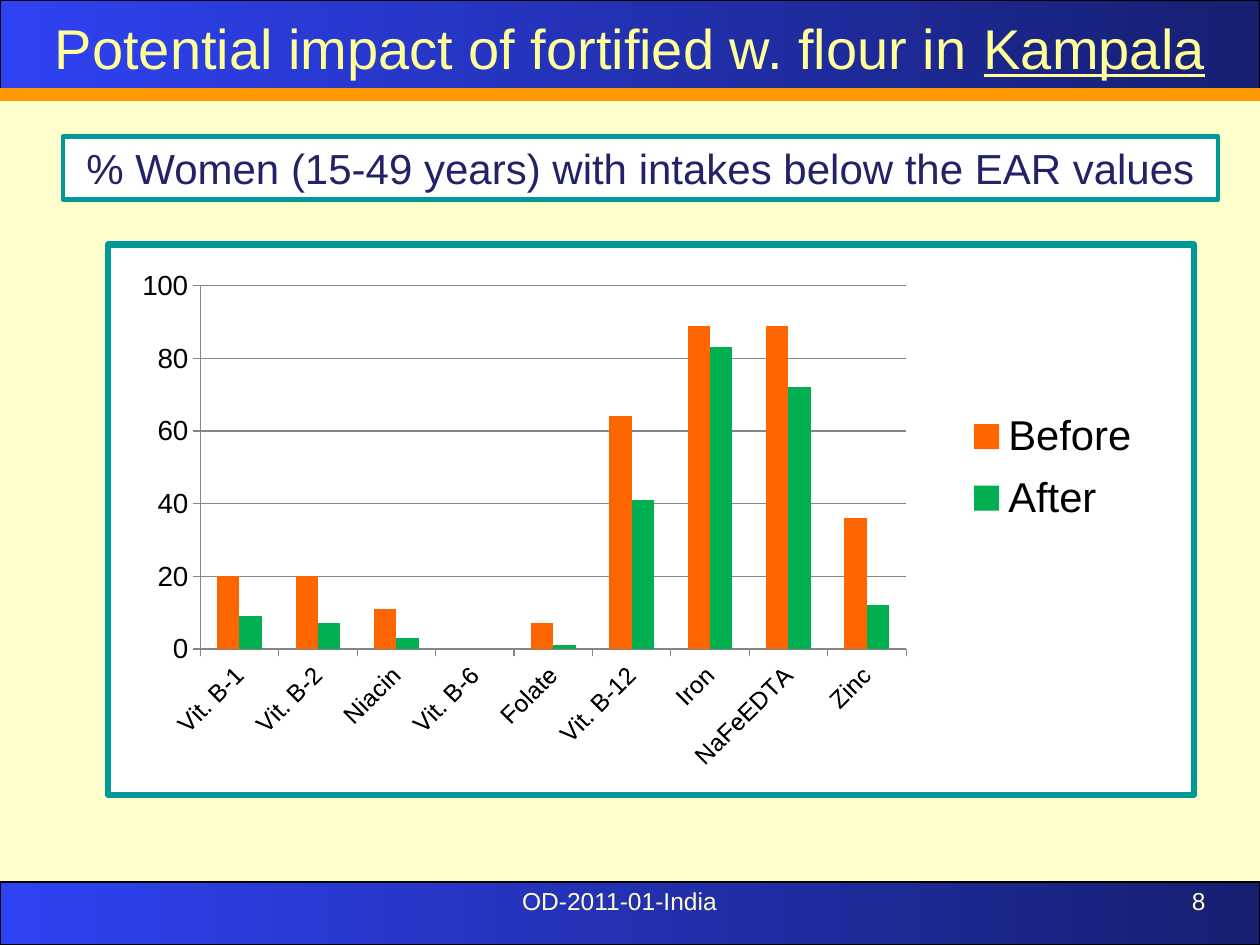
from dataclasses import dataclass

import pptx
import pptx.chart.data
import pptx.dml.color
import pptx.enum.chart
import pptx.enum.shapes
import pptx.enum.text
import pptx.oxml
import pptx.oxml.ns
import pptx.util

SLIDE_WIDTH, SLIDE_HEIGHT = 10, 7.5
COLUMNS, ROWS = 60, 90
ALIGN = pptx.enum.text.PP_ALIGN
ANCHOR = pptx.enum.text.MSO_ANCHOR


@dataclass(frozen=True)
class Theme:
    font: str = "Arial"
    background: str = "FFFFCC"
    band: tuple = ("2F42F3", "161F70")
    title: str = "FFFF99"
    rule: str = "FF9900"
    frame: str = "009999"
    panel: str = "FFFFFF"
    caption: str = "222267"
    ink: str = "000000"
    axis: str = "868686"
    before: str = "FF6600"
    after: str = "00B050"
    title_size: int = 32
    caption_size: int = 24
    value_size: int = 16
    small_size: int = 14


THEME = Theme()


def rgb(value):
    return pptx.dml.color.RGBColor.from_string(value)


def grid(column, row, columns, rows):
    """Turn grid cells into left, top, width and height."""
    x, y = SLIDE_WIDTH / COLUMNS, SLIDE_HEIGHT / ROWS
    return [pptx.util.Inches(n) for n in (column * x, row * y, columns * x, rows * y)]


def apply(target, formats):
    for name, value in formats.items():
        setattr(target, name, value)


def set_font(font, size, color):
    apply(font, {"name": THEME.font, "size": pptx.util.Pt(size)})
    font.color.rgb = rgb(color)


def set_line(line, color, width):
    line.color.rgb = rgb(color)
    line.width = pptx.util.Pt(width)


def set_fill(fill, color):
    fill.solid()
    fill.fore_color.rgb = rgb(color)


def write(shape, runs, size, color, alignment, anchor):
    """Write one paragraph from (text, underlined) pairs."""
    frame = shape.text_frame
    apply(frame, {"word_wrap": True, "vertical_anchor": anchor,
                  "auto_size": pptx.enum.text.MSO_AUTO_SIZE.NONE})
    paragraph = frame.paragraphs[0]
    paragraph.alignment = alignment
    for text, underlined in runs:
        run = paragraph.add_run()
        run.text = text
        set_font(run.font, size, color)
        if underlined:
            run.font.underline = True


def add_rectangle(slide, cells, line_color, line_width):
    shape = slide.shapes.add_shape(pptx.enum.shapes.MSO_SHAPE.RECTANGLE, *grid(*cells))
    shape.shadow.inherit = False
    set_line(shape.line, line_color, line_width)
    return shape


def add_band(slide, row, rows):
    fill = add_rectangle(slide, (0, row, COLUMNS, rows), THEME.ink, 0.75).fill
    fill.gradient()
    fill.gradient_angle = 0
    for stop, color in zip(fill.gradient_stops, THEME.band):
        stop.color.rgb = rgb(color)


def add_rule(slide, row):
    left, top, width, _ = grid(0, row, COLUMNS, 0)
    rule = slide.shapes.add_connector(
        pptx.enum.shapes.MSO_CONNECTOR.STRAIGHT, left, top, left + width, top)
    set_line(rule.line, THEME.rule, 8)
    rule.element.spPr.append(pptx.oxml.parse_xml(
        f"<a:effectLst {pptx.oxml.ns.nsdecls('a')}/>"))


def place_title(slide, runs):
    title = slide.shapes.title
    title.left, title.top, title.width, title.height = grid(0, 0, COLUMNS, 9)
    write(title, runs, THEME.title_size, THEME.title, ALIGN.CENTER, ANCHOR.MIDDLE)
    title.element.getparent().append(title.element)  # in front of its band


def add_footer_text(slide, text, column, columns, alignment):
    box = slide.shapes.add_textbox(*grid(column, 83.75, columns, 6.25))
    write(box, [(text, False)], THEME.small_size, THEME.background, alignment, ANCHOR.TOP)


def chart_layout(x, y, width, height, inner=False):
    """Manual layout, in shares of the chart's size."""
    target = '<c:layoutTarget val="inner"/>' if inner else ""
    sizes = "".join(f'<c:{tag} val="{value}"/>'
                    for tag, value in zip("xywh", (x, y, width, height)))
    return pptx.oxml.parse_xml(
        f"<c:layout {pptx.oxml.ns.nsdecls('c')}><c:manualLayout>{target}"
        f'<c:xMode val="edge"/><c:yMode val="edge"/>{sizes}</c:manualLayout></c:layout>')


def frame_chart(chart):
    """Fill and border of the chart area, and places of its parts."""
    qn, root = pptx.oxml.ns.qn, chart.element
    border = pptx.util.Pt(3.5)
    root.find(qn("c:chart")).addnext(pptx.oxml.parse_xml(
        f"<c:spPr {pptx.oxml.ns.nsdecls('c', 'a')}>"
        f'<a:solidFill><a:srgbClr val="{THEME.panel}"/></a:solidFill>'
        f'<a:ln w="{border}"><a:solidFill><a:srgbClr val="{THEME.frame}"/></a:solidFill>'
        "</a:ln></c:spPr>"))
    plot_area = root.find(".//" + qn("c:plotArea"))
    for layout in plot_area.findall(qn("c:layout")):
        plot_area.remove(layout)
    plot_area.insert(0, chart_layout(0.085, 0.075, 0.65, 0.66, inner=True))
    root.find(".//" + qn("c:legendPos")).addnext(chart_layout(0.78, 0.28, 0.18, 0.25))
    labels = root.find("/".join([".//" + qn("c:catAx"), qn("c:txPr"), qn("a:bodyPr")]))
    labels.set("rot", str(-45 * 60000))


def add_column_chart(slide, cells, categories, series):
    data = pptx.chart.data.CategoryChartData()
    data.categories = categories
    for name, values, _ in series:
        data.add_series(name, values)
    kinds = pptx.enum.chart
    chart = slide.shapes.add_chart(
        kinds.XL_CHART_TYPE.COLUMN_CLUSTERED, *grid(*cells), data).chart
    set_font(chart.font, THEME.small_size, THEME.ink)
    apply(chart, {"has_title": False, "has_legend": True})
    apply(chart.legend, {"position": kinds.XL_LEGEND_POSITION.RIGHT,
                         "include_in_layout": False})
    set_font(chart.legend.font, THEME.caption_size, THEME.ink)

    # Axes and grid lines
    for axis, size in ((chart.category_axis, THEME.small_size),
                       (chart.value_axis, THEME.value_size)):
        axis.major_tick_mark = kinds.XL_TICK_MARK.OUTSIDE
        set_line(axis.format.line, THEME.axis, 0.75)
        set_font(axis.tick_labels.font, size, THEME.ink)
    apply(chart.value_axis, {"minimum_scale": 0, "maximum_scale": 100,
                             "major_unit": 20, "has_major_gridlines": True})
    set_line(chart.value_axis.major_gridlines.format.line, THEME.axis, 0.75)

    # Columns
    plot = chart.plots[0]
    apply(plot, {"vary_by_categories": False, "gap_width": 150, "overlap": 0})
    for column, (_, _, color) in zip(plot.series, series):
        set_fill(column.format.fill, color)
    frame_chart(chart)


def add_caption(slide, text, cells):
    box = add_rectangle(slide, cells, THEME.frame, 2.5)
    set_fill(box.fill, THEME.panel)
    write(box, [(text, False)], THEME.caption_size, THEME.caption,
          ALIGN.CENTER, ANCHOR.MIDDLE)


def main():
    presentation = pptx.Presentation()
    presentation.slide_width = pptx.util.Inches(SLIDE_WIDTH)
    presentation.slide_height = pptx.util.Inches(SLIDE_HEIGHT)
    slide = presentation.slides.add_slide(
        presentation.slide_layouts.get_by_name("Title Only"))
    set_fill(slide.background.fill, THEME.background)

    # Header and footer
    add_band(slide, 0, 9)
    add_band(slide, 84, 6)
    place_title(slide, [("Potential impact of fortified w. flour in ", False),
                        ("Kampala", True)])
    add_rule(slide, 9)
    add_footer_text(slide, "OD-2011-01-India", 18.5, 22, ALIGN.CENTER)
    add_footer_text(slide, "8", 44, 14, ALIGN.RIGHT)

    # Chart with its caption
    add_column_chart(
        slide, (5, 23, 52, 53),
        ["Vit. B-1", "Vit. B-2", "Niacin", "Vit. B-6", "Folate", "Vit. B-12",
         "Iron", "NaFeEDTA", "Zinc"],
        [("Before", (20, 20, 11, 0, 7, 64, 89, 89, 36), THEME.before),
         ("After", (9, 7, 3, 0, 1, 41, 83, 72, 12), THEME.after)])
    add_caption(slide, "% Women (15-49 years) with intakes below the EAR values",
                (3, 13, 55, 6))
    presentation.save("out.pptx")


if __name__ == "__main__":
    main()
